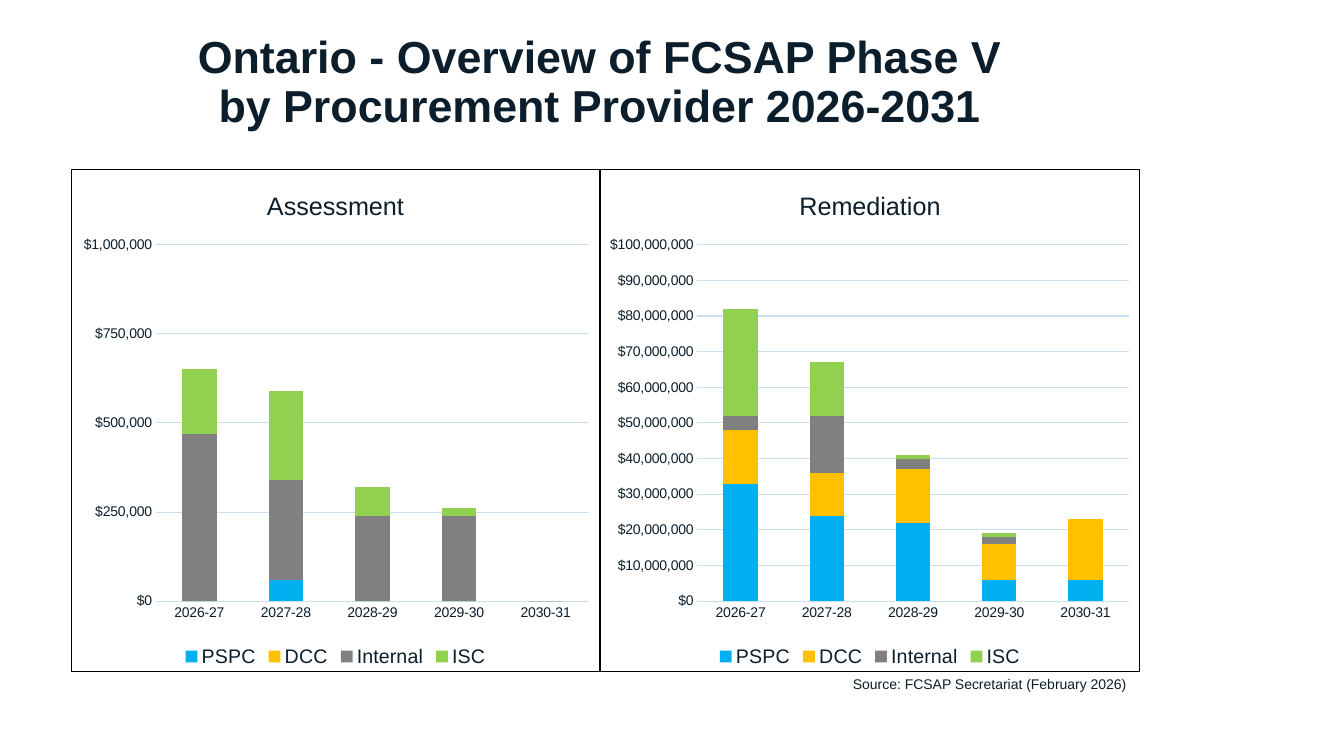
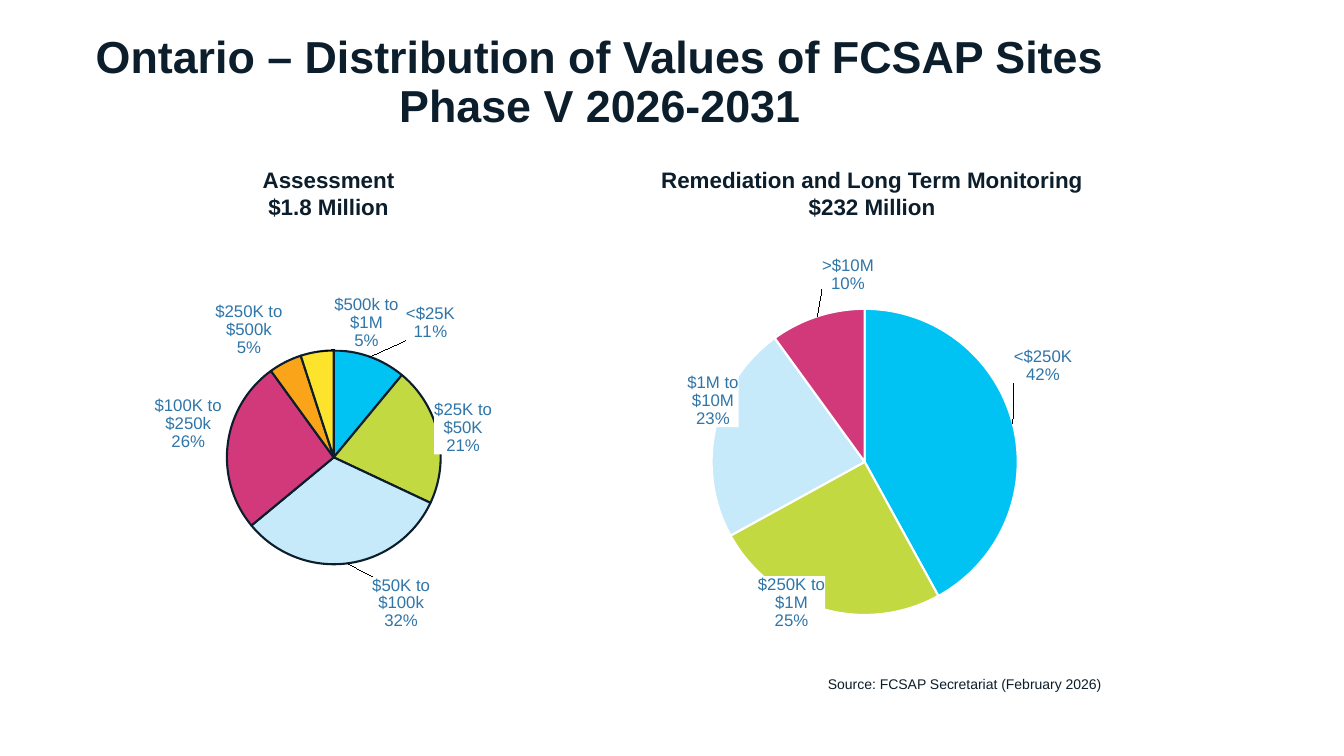
from copy import deepcopy

from lxml import etree
from pptx import Presentation
from pptx.chart.data import CategoryChartData
from pptx.dml.color import RGBColor
from pptx.enum.chart import XL_CHART_TYPE, XL_LABEL_POSITION, XL_LEGEND_POSITION, XL_TICK_MARK
from pptx.enum.text import MSO_ANCHOR, MSO_AUTO_SIZE, PP_ALIGN
from pptx.oxml import parse_xml
from pptx.oxml.ns import nsdecls, qn
from pptx.util import Emu, Pt

# Enum members
STACKED, PIE = XL_CHART_TYPE.COLUMN_STACKED, XL_CHART_TYPE.PIE
OUTSIDE_END = XL_LABEL_POSITION.OUTSIDE_END
LEGEND_BOTTOM = XL_LEGEND_POSITION.BOTTOM
NO_TICK = XL_TICK_MARK.NONE
TOP, MIDDLE = MSO_ANCHOR.TOP, MSO_ANCHOR.MIDDLE
NO_FIT, GROW = MSO_AUTO_SIZE.NONE, MSO_AUTO_SIZE.SHAPE_TO_FIT_TEXT
LEFT, CENTER = PP_ALIGN.LEFT, PP_ALIGN.CENTER

# Colours
INK = RGBColor(0x0C, 0x1E, 0x2B)
WHITE = RGBColor(0xFF, 0xFF, 0xFF)
GRID = RGBColor(0xCA, 0xE0, 0xF0)
LABEL_BLUE = RGBColor(0x2F, 0x75, 0xA8)
PROVIDER_COLORS = {
    "PSPC": RGBColor(0x00, 0xB0, 0xF0),
    "DCC": RGBColor(0xFF, 0xC0, 0x00),
    "Internal": RGBColor(0x80, 0x80, 0x80),
    "ISC": RGBColor(0x92, 0xD0, 0x50),
}
SLICE_COLORS = [
    RGBColor(0x00, 0xC2, 0xF3),
    RGBColor(0xC3, 0xD9, 0x41),
    RGBColor(0xC7, 0xEA, 0xFB),
    RGBColor(0xD1, 0x39, 0x7A),
    RGBColor(0xFA, 0xA4, 0x1A),
    RGBColor(0xFE, 0xE3, 0x2D),
]

# Scale and shared wording
EMU_PER_PX = 914400 / 100.8
FONT = "Arial"
YEARS = ["2026-27", "2027-28", "2028-29", "2029-30", "2030-31"]
SOURCE = "Source: FCSAP Secretariat (February 2026)"


def px(length):
    return Emu(round(length * EMU_PER_PX))


def set_values(target, **values):
    for name, value in values.items():
        setattr(target, name, value)


def set_font(font, size, color=INK, bold=False):
    set_values(font, name=FONT, size=Pt(size), bold=bold)
    font.color.rgb = color


def set_line(line, color, width):
    line.color.rgb = color
    line.width = Pt(width)


def manual_layout(**values):
    """Chart layout from fractions of the chart area."""
    layout = parse_xml(f"<c:layout {nsdecls('c')}><c:manualLayout/></c:layout>")
    for name, value in values.items():
        etree.SubElement(layout[0], qn(f"c:{name}")).set("val", str(value))
    return layout


class Deck:
    def __init__(self):
        self.presentation = Presentation()
        set_values(self.presentation, slide_width=px(1344), slide_height=px(756))
        self.slide = None

    def add_slide(self, title, source_left):
        """New slide with the shared title and source line."""
        self.slide = self.presentation.slides.add_slide(self.presentation.slide_layouts[6])
        self.add_text(title, (71, 35, 1058, 125), 32, bold=True, line_spacing=0.9)
        self.add_text(SOURCE, (source_left, 671, 296, 27), 10, align=LEFT, free=True)

    def add_text(self, text, box, size, bold=False, align=CENTER, anchor=TOP,
                 line_spacing=None, free=False):
        shape = self.slide.shapes.add_textbox(*map(px, box))
        frame = shape.text_frame
        set_values(frame, word_wrap=not free, auto_size=GROW if free else NO_FIT,
                   vertical_anchor=anchor)
        if not free:
            set_values(frame, margin_left=0, margin_right=0, margin_top=0, margin_bottom=0)
        frame.text = text
        for paragraph in frame.paragraphs:
            set_values(paragraph, alignment=align, line_spacing=line_spacing)
            for run in paragraph.runs:
                set_font(run.font, size, bold=bold)

    def add_chart(self, kind, box, categories, series, plot_area):
        data = CategoryChartData()
        data.categories = categories
        for name, values in series.items():
            data.add_series(name, values)
        chart = self.slide.shapes.add_chart(kind, *map(px, box), data).chart
        set_font(chart.font, 10)
        area = chart.plots[0]._element.getparent()
        for old in area.findall(qn("c:layout")):
            area.remove(old)
        x, y, w, h = plot_area
        area.insert(0, manual_layout(layoutTarget="inner", xMode="edge", yMode="edge",
                                     x=x, y=y, w=w, h=h))
        return chart

    def add_columns(self, title, box, amounts, maximum, step, plot_area):
        chart = self.add_chart(STACKED, box, YEARS, amounts, plot_area)
        # Title, legend and frame
        chart.has_title = True
        chart.chart_title.text_frame.text = title
        set_font(chart.chart_title.text_frame.paragraphs[0].runs[0].font, 18)
        chart.has_legend = True
        set_values(chart.legend, position=LEGEND_BOTTOM, include_in_layout=False)
        set_font(chart.legend.font, 14)
        chart._chartSpace.find(qn("c:txPr")).addprevious(parse_xml(
            f'<c:spPr {nsdecls("c", "a")}><a:noFill/><a:ln w="9525"><a:solidFill>'
            '<a:srgbClr val="000000"/></a:solidFill></a:ln></c:spPr>'))
        # Axes
        for axis in (chart.category_axis, chart.value_axis):
            set_values(axis, major_tick_mark=NO_TICK, minor_tick_mark=NO_TICK)
        set_line(chart.category_axis.format.line, GRID, 0.75)
        value_axis = chart.value_axis
        set_values(value_axis, minimum_scale=0, maximum_scale=maximum, major_unit=step,
                   has_major_gridlines=True)
        value_axis.format.line.fill.background()
        set_line(value_axis.major_gridlines.format.line, GRID, 0.75)
        set_values(value_axis.tick_labels, number_format=r"\$#,##0",
                   number_format_is_linked=False)
        # Columns
        plot = chart.plots[0]
        set_values(plot, gap_width=150, overlap=100, vary_by_categories=False)
        for series in plot.series:
            series.format.fill.solid()
            series.format.fill.fore_color.rgb = PROVIDER_COLORS[series.name]

    def add_pie(self, box, shares, outline, plot_area, label_shifts):
        chart = self.add_chart(PIE, box, list(shares), {"Series 1": shares.values()}, plot_area)
        set_values(chart, has_title=False, has_legend=False)
        chart.plots[0].vary_by_categories = True
        series = chart.plots[0].series[0]
        for index, color in enumerate(SLICE_COLORS[:len(shares)]):
            slice_format = series.points[index].format
            slice_format.fill.solid()
            slice_format.fill.fore_color.rgb = color
            set_line(slice_format.line, outline, 1.5)
        # Labels on white, category above percentage
        labels = series.data_labels
        set_values(labels, show_value=False, show_category_name=True, show_percentage=True,
                   number_format="0%", number_format_is_linked=False, position=OUTSIDE_END)
        set_font(labels.font, 12, LABEL_BLUE)
        element = labels._element
        element.find(qn("c:numFmt")).addnext(parse_xml(
            f'<c:spPr {nsdecls("c", "a")}><a:solidFill><a:srgbClr val="{WHITE}"/>'
            '</a:solidFill></c:spPr>'))
        element.find(qn("c:showBubbleSize")).addnext(parse_xml(
            f"<c:separator {nsdecls('c')}>\n</c:separator>"))
        # Shifted labels repeat the shared settings
        settings = [child for child in element if child.tag != qn("c:showLeaderLines")]
        for position, (index, (x, y)) in enumerate(label_shifts.items()):
            label = parse_xml(f'<c:dLbl {nsdecls("c")}><c:idx val="{index}"/></c:dLbl>')
            label.append(manual_layout(x=x, y=y))
            label.extend(deepcopy(settings))
            element.insert(position, label)


def main():
    deck = Deck()

    # Procurement providers
    deck.add_slide("Ontario - Overview of FCSAP Phase V\vby Procurement Provider 2026-2031", 843)
    deck.add_columns("Assessment", (71, 169, 529, 503), {
        "PSPC": [0, 60000, 0, 0, 0],
        "DCC": [0, 0, 0, 0, 0],
        "Internal": [470000, 280000, 240000, 240000, 0],
        "ISC": [180000, 250000, 80000, 20000, 0],
    }, 1000000, 250000, (0.16, 0.15, 0.82, 0.71))
    deck.add_columns("Remediation", (600, 169, 540, 503), {
        "PSPC": [33000000, 24000000, 22000000, 6000000, 6000000],
        "DCC": [15000000, 12000000, 15000000, 10000000, 17000000],
        "Internal": [4000000, 16000000, 3000000, 2000000, 0],
        "ISC": [30000000, 15000000, 1000000, 1000000, 0],
    }, 100000000, 10000000, (0.18, 0.15, 0.8, 0.71))

    # Values of sites
    deck.add_slide("Ontario – Distribution of Values of FCSAP Sites Phase V 2026-2031", 818)
    deck.add_pie((86, 278, 486, 359), {
        "<$25K": 11, "$25K to $50K": 21, "$50K to $100k": 32,
        "$100K to $250k": 26, "$250K to $500k": 5, "$500k to $1M": 5,
    }, INK, (0.29, 0.2, 0.44, 0.6),
        {0: (0.07, -0.03), 1: (-0.02, 0.06), 2: (0.05, 0.02), 3: (0, 0.02), 5: (0.17, 0.01)})
    deck.add_pie((629, 257, 486, 427), {
        "<$250K": 42, "$250K to $1M": 25, "$1M to $10M": 23, ">$10M": 10,
    }, WHITE, (0.17, 0.12, 0.63, 0.72),
        {0: (-0.01, -0.09), 1: (0.01, -0.09), 2: (0.06, 0), 3: (0.12, -0.05)})
    for heading, left, width in (
        ("Assessment\n$1.8 Million", 238, 181),
        ("Remediation and Long Term Monitoring\n$232 Million", 658, 428),
    ):
        deck.add_text(heading, (left, 167, width, 52), 16, bold=True, anchor=MIDDLE)

    deck.presentation.save("out.pptx")


if __name__ == "__main__":
    main()
